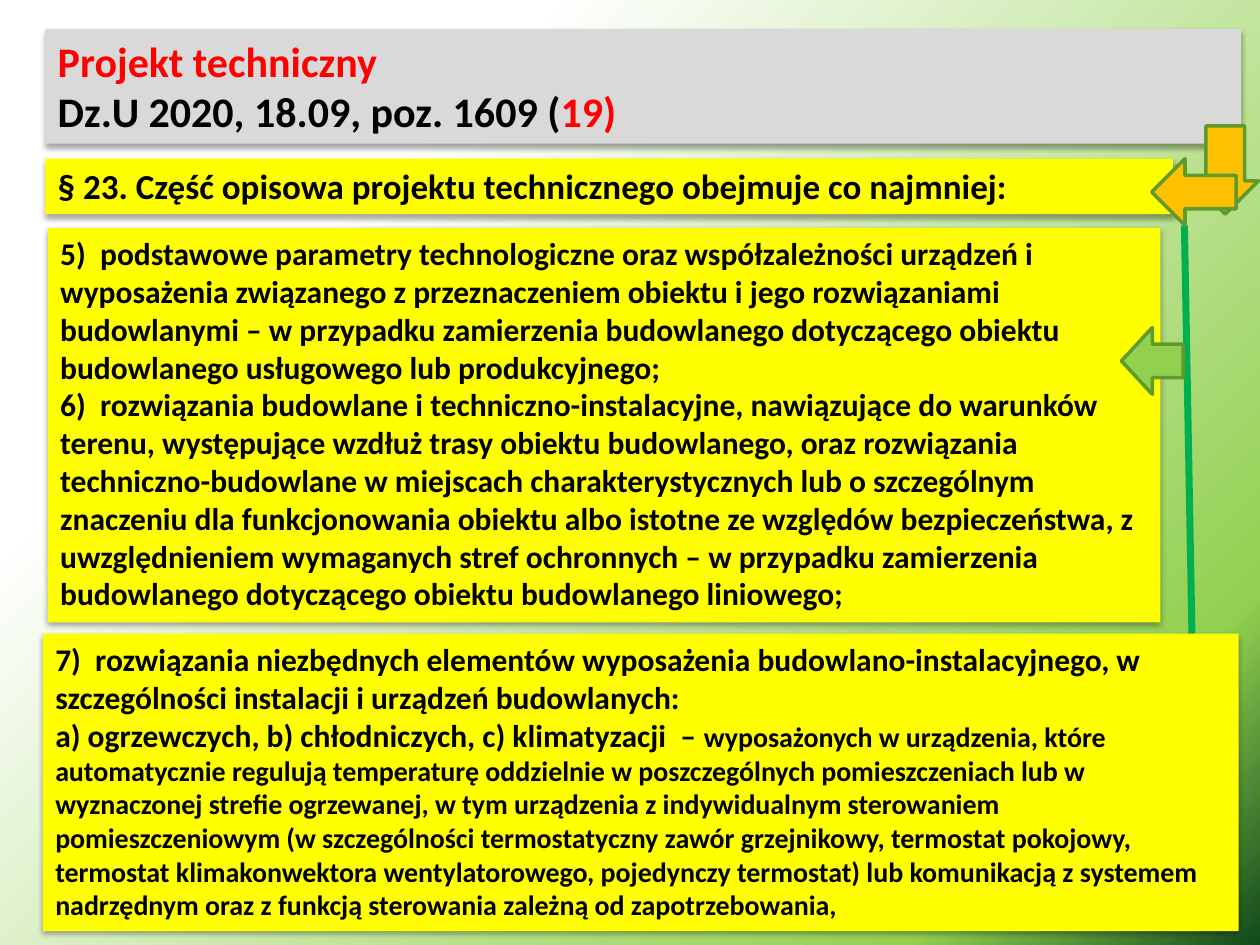
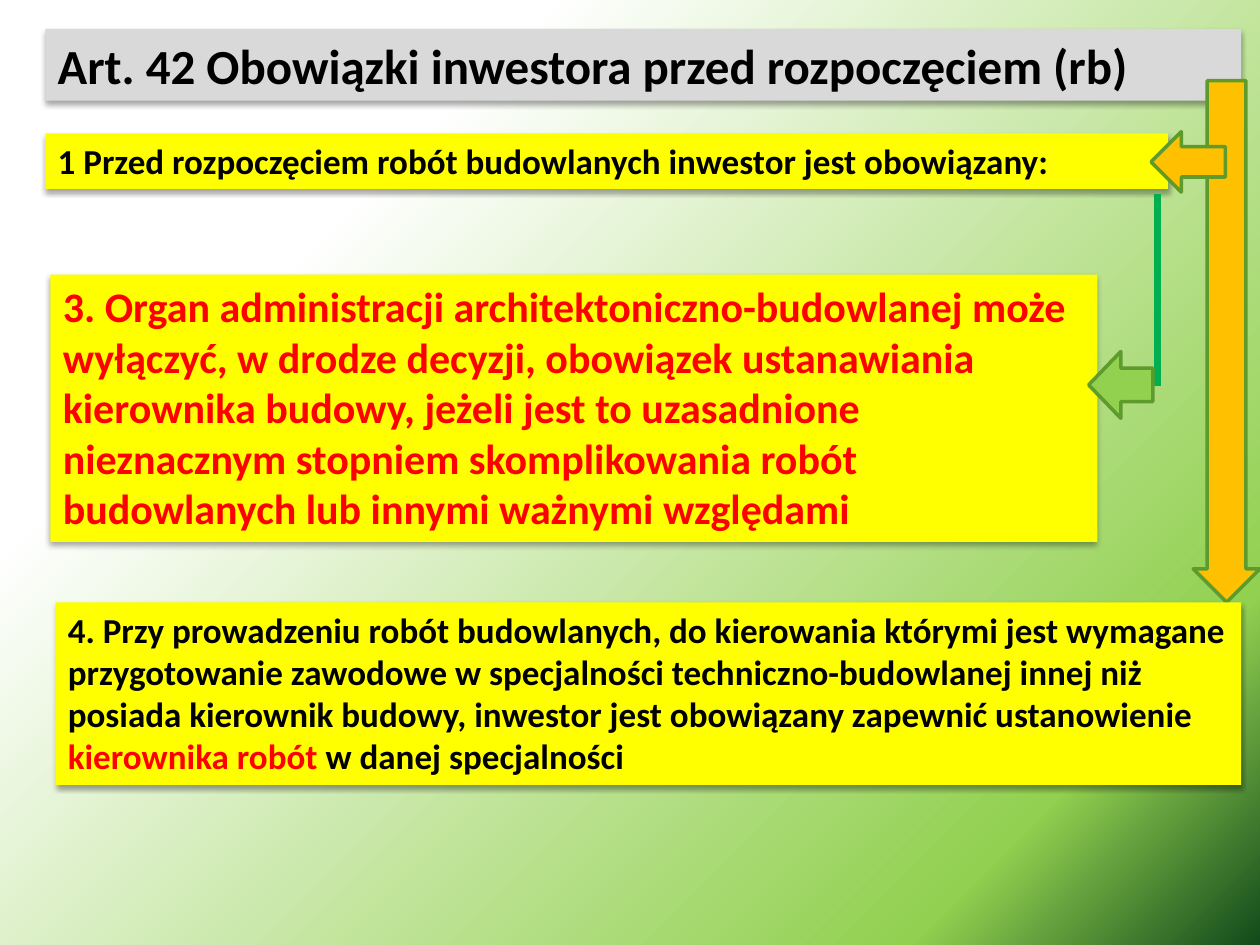
from lxml.etree import SubElement
from pptx import Presentation
from pptx.dml.color import RGBColor
from pptx.enum.shapes import MSO_CONNECTOR, MSO_SHAPE
from pptx.enum.text import MSO_ANCHOR, MSO_AUTO_SIZE, PP_ALIGN
from pptx.oxml.ns import qn
from pptx.util import Inches, Pt

BLACK = RGBColor(0x00, 0x00, 0x00)
WHITE = RGBColor(0xFF, 0xFF, 0xFF)
RED = RGBColor(0xFF, 0x00, 0x00)
GREY = RGBColor(0xD9, 0xD9, 0xD9)
YELLOW = RGBColor(0xFF, 0xFF, 0x00)
ORANGE = RGBColor(0xFF, 0xC0, 0x00)
LIGHT_GREEN = RGBColor(0x92, 0xD0, 0x50)
OUTLINE_GREEN = RGBColor(0x5E, 0x9B, 0x2C)
LINE_GREEN = RGBColor(0x00, 0xB0, 0x50)
DARK_GREEN = RGBColor(0x12, 0x4A, 0x1B)
FONT = "Calibri"
LEFT = 0.36
BACKGROUND_STOPS = ((0, DARK_GREEN), (16, LIGHT_GREEN), (75, WHITE))


def add_element(parent, tag, **attributes):
    """Append a child element and return it."""
    return SubElement(parent, qn(tag), {name: str(value) for name, value in attributes.items()})


class LegalDeck:
    """Holds the shared style and the slide being built."""

    def __init__(self):
        self.presentation = Presentation()
        self.presentation.slide_width = Inches(10)
        self.presentation.slide_height = Inches(7.5)
        self.slide = None
        self.paint_background()

    def paint_background(self):
        """Give the master a gradient spreading from the lower right corner."""
        master = self.presentation.slide_master
        master.background.fill.gradient()
        gradient = master.element.find(".//" + qn("a:gradFill"))
        for child in list(gradient):
            gradient.remove(child)
        stops = add_element(gradient, "a:gsLst")
        for position, color in BACKGROUND_STOPS:
            stop = add_element(stops, "a:gs", pos=position * 1000)
            add_element(stop, "a:srgbClr", val=color)
        circle = add_element(gradient, "a:path", path="circle")
        add_element(circle, "a:fillToRect", l=100000, t=100000)

    def new_slide(self):
        """Start a blank slide."""
        self.slide = self.presentation.slides.add_slide(self.presentation.slide_layouts[6])

    def shape(self, kind, left, top, width, height, color):
        """Add a filled preset shape without a shadow."""
        shape = self.slide.shapes.add_shape(
            kind, Inches(left), Inches(top), Inches(width), Inches(height))
        shape.shadow.inherit = False
        shape.fill.solid()
        shape.fill.fore_color.rgb = color
        return shape

    def box(self, left, top, width, height, size, *paragraphs, fill=YELLOW):
        """Add a shadowed text box; each paragraph lists (text, color[, size]) runs."""
        shape = self.shape(MSO_SHAPE.RECTANGLE, left, top, width, height, fill)
        shape.line.fill.background()
        effects = shape._element.spPr.find(qn("a:effectLst"))
        shadow = add_element(effects, "a:outerShdw", blurRad=Pt(3.1), dist=Pt(1.8),
                             dir=90 * 60000, rotWithShape=0)
        shadow_color = add_element(shadow, "a:srgbClr", val=BLACK)
        add_element(shadow_color, "a:alpha", val=35000)
        frame = shape.text_frame
        frame.word_wrap = True
        frame.auto_size = MSO_AUTO_SIZE.SHAPE_TO_FIT_TEXT
        frame.vertical_anchor = MSO_ANCHOR.TOP
        for index, runs in enumerate(paragraphs):
            paragraph = frame.add_paragraph() if index else frame.paragraphs[0]
            paragraph.alignment = PP_ALIGN.LEFT
            for text, color, *own_size in runs:
                run = paragraph.add_run()
                run.text = text
                run.font.name = FONT
                run.font.size = Pt(own_size[0] if own_size else size)
                run.font.bold = True
                run.font.color.rgb = color

    def title(self, height, size, *paragraphs):
        """Add the grey title band."""
        self.box(LEFT, 0.23, 9.49, height, size, *paragraphs, fill=GREY)

    def arrow(self, left, top, width, height, color=ORANGE):
        """Add an outlined down arrow."""
        arrow = self.shape(MSO_SHAPE.DOWN_ARROW, left, top, width, height, color)
        arrow.line.color.rgb = OUTLINE_GREEN
        arrow.line.width = Pt(2)
        return arrow

    def down_arrow(self, left, top, height):
        """Add an arrow with a wide stem that points down."""
        self.arrow(left, top, 0.53, height).adjustments[0] = 0.58

    def left_arrow(self, left, top, width, height, color=ORANGE):
        """Add an arrow turned to point left."""
        self.arrow(left, top, width, height, color).rotation = 90

    def line(self, start_x, start_y, end_x, end_y):
        """Add a thick green line."""
        line = self.slide.shapes.add_connector(
            MSO_CONNECTOR.STRAIGHT, Inches(start_x), Inches(start_y), Inches(end_x), Inches(end_y))
        line.line.color.rgb = LINE_GREEN
        line.line.width = Pt(4)
        add_element(line._element.spPr, "a:effectLst")


def build_technical_design(deck):
    """Build the slide on the descriptive part of the technical design."""
    deck.new_slide()
    deck.title(0.91, 24,
               [("Projekt techniczny", RED)],
               [("Dz.U 2020, 18.09, poz. 1609 (", BLACK), ("19)", RED)])
    deck.down_arrow(9.46, 1, 0.7)
    deck.box(LEFT, 1.26, 8.95, 0.44, 20,
             [("§ 23. Część opisowa projektu technicznego obejmuje co najmniej:", BLACK)])
    deck.line(9.4, 1.79, 9.46, 5.03)
    deck.left_arrow(9.21, 1.19, 0.53, 0.67)
    deck.box(0.38, 1.81, 8.83, 3.13, 18,
             [("5)  podstawowe parametry technologiczne oraz współzależności urządzeń i "
               "wyposażenia związanego z przeznaczeniem obiektu i jego rozwiązaniami "
               "budowlanymi – w przypadku zamierzenia budowlanego dotyczącego obiektu "
               "budowlanego usługowego lub produkcyjnego;", BLACK)],
             [("6)  rozwiązania budowlane i techniczno-instalacyjne, nawiązujące do warunków "
               "terenu, występujące wzdłuż trasy obiektu budowlanego, oraz rozwiązania "
               "techniczno-budowlane w miejscach charakterystycznych lub o szczególnym "
               "znaczeniu dla funkcjonowania obiektu albo istotne ze względów bezpieczeństwa, z "
               "uwzględnieniem wymaganych stref ochronnych – w przypadku zamierzenia "
               "budowlanego dotyczącego obiektu budowlanego liniowego;", BLACK)])
    deck.box(0.34, 5.03, 9.49, 2.36, 18,
             [("7)  rozwiązania niezbędnych elementów wyposażenia budowlano-instalacyjnego, w "
               "szczególności instalacji i urządzeń budowlanych:", BLACK)],
             [("a) ogrzewczych, b) chłodniczych, c) klimatyzacji  – ", BLACK),
              ("wyposażonych w urządzenia, które automatycznie regulują temperaturę oddzielnie "
               "w poszczególnych pomieszczeniach lub w wyznaczonej strefie ogrzewanej, w tym "
               "urządzenia z indywidualnym sterowaniem pomieszczeniowym (w szczególności "
               "termostatyczny zawór grzejnikowy, termostat pokojowy, termostat "
               "klimakonwektora wentylatorowego, pojedynczy termostat) lub komunikacją z "
               "systemem nadrzędnym oraz z funkcją sterowania zależną od zapotrzebowania,",
               BLACK, 16)])
    deck.left_arrow(8.88, 2.62, 0.53, 0.49, LIGHT_GREEN)


def build_investor_duties(deck):
    """Build the slide on the investor's duties before works begin."""
    deck.new_slide()
    deck.title(0.57, 28, [("Art. 42 Obowiązki inwestora przed rozpoczęciem (rb)", BLACK)])
    deck.down_arrow(9.47, 0.64, 4.14)
    deck.box(LEFT, 1.06, 8.91, 0.44, 20,
             [("1 Przed rozpoczęciem robót budowlanych inwestor jest obowiązany:", BLACK)])
    deck.box(0.4, 2.18, 8.31, 2.12, 24,
             [("3. Organ administracji architektoniczno-budowlanej może wyłączyć, w drodze "
               "decyzji, obowiązek ustanawiania kierownika budowy, jeżeli jest to uzasadnione "
               "nieznacznym stopniem skomplikowania robót budowlanych lub innymi ważnymi "
               "względami", RED)])
    deck.left_arrow(9.19, 0.99, 0.48, 0.59)
    deck.line(9.19, 1.54, 9.19, 3.06)
    deck.left_arrow(8.63, 2.8, 0.53, 0.51, LIGHT_GREEN)
    deck.box(0.44, 4.78, 9.41, 1.45, 20,
             [("4. Przy prowadzeniu robót budowlanych, do kierowania którymi jest wymagane "
               "przygotowanie zawodowe w specjalności techniczno-budowlanej innej niż posiada "
               "kierownik budowy, inwestor jest obowiązany zapewnić ustanowienie ", BLACK),
              ("kierownika robót ", RED), ("w danej specjalności", BLACK)])


def main():
    """Build both slides and save the presentation."""
    deck = LegalDeck()
    build_technical_design(deck)
    build_investor_duties(deck)
    deck.presentation.save("out.pptx")


if __name__ == "__main__":
    main()
